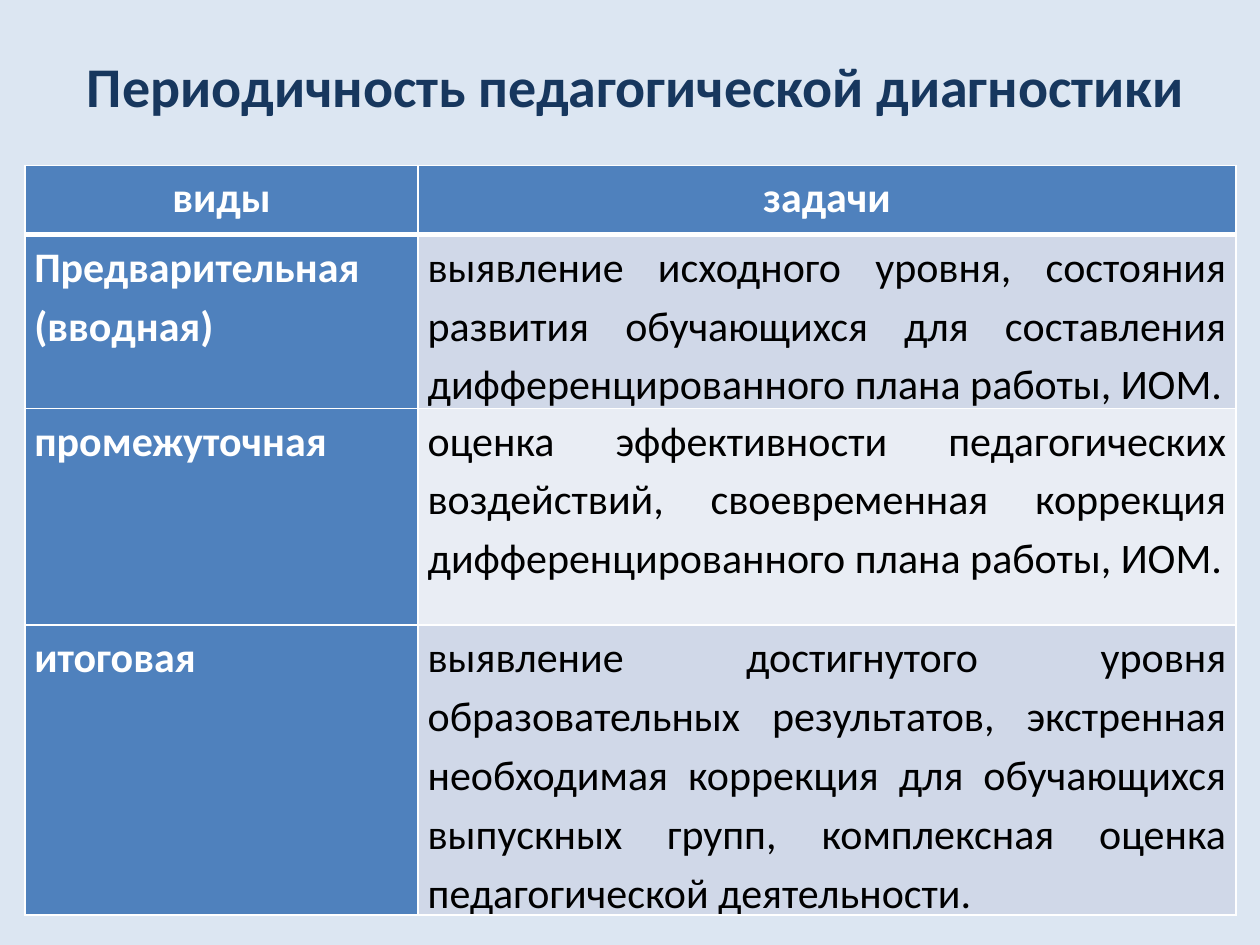
from lxml.etree import SubElement as Sub
from pptx import Presentation
from pptx.dml.color import RGBColor as RGB
from pptx.enum.text import MSO_ANCHOR as Anchor, MSO_AUTO_SIZE as Fit, PP_ALIGN as Align
from pptx.oxml.ns import qn
from pptx.util import Pt

PALE = RGB(0xDC, 0xE6, 0xF2)
NAVY = RGB(0x17, 0x37, 0x5E)
BLUE = RGB(0x4F, 0x81, 0xBD)
BANDS = [RGB(0xD0, 0xD8, 0xE8), RGB(0xE9, 0xED, 0xF4)]
WHITE = RGB(0xFF, 0xFF, 0xFF)
BLACK = RGB(0, 0, 0)

TITLE = "Периодичность педагогической диагностики"
ROWS = [
    ("виды", "задачи"),
    ("Предварительная (вводная)",
     "выявление исходного уровня, состояния развития обучающихся для "
     "составления дифференцированного плана работы, ИОМ."),
    ("промежуточная",
     "оценка эффективности педагогических воздействий, своевременная "
     "коррекция дифференцированного плана работы, ИОМ."),
    ("итоговая",
     "выявление достигнутого уровня образовательных результатов, экстренная "
     "необходимая коррекция для обучающихся выпускных групп, комплексная "
     "оценка педагогической деятельности."),
]
WIDTHS = [224.8, 467.2]
HEIGHTS = [39.6, 81.4, 123.8, 123.8]


def add_run(para, text, size, color, bold):
    run = para.add_run()
    run.text = text
    font = run.font
    font.name, font.size, font.bold = "Calibri", Pt(size), bold
    font.color.rgb = color


def set_title(slide):
    box = slide.shapes.title
    box.left, box.top, box.width, box.height = Pt(42.5), Pt(26), Pt(648), Pt(46)
    frame = box.text_frame
    frame.word_wrap = False
    frame.auto_size = Fit.SHAPE_TO_FIT_TEXT
    frame.vertical_anchor = Anchor.TOP
    para = frame.paragraphs[0]
    para.alignment = Align.LEFT
    add_run(para, TITLE, 32, NAVY, True)


def set_edges(cell, top, base):
    """Draw white cell borders; top and base are line widths in points."""
    props = cell._tc.get_or_add_tcPr()
    for tag, width in (("lnL", 1), ("lnR", 1), ("lnT", top), ("lnB", base)):
        line = Sub(props, qn(f"a:{tag}"), w=str(Pt(width)))
        fill = Sub(line, qn("a:solidFill"))
        Sub(fill, qn("a:srgbClr"), val=str(WHITE))


def fill_cell(cell, text, row, col):
    head = row == 0
    key = head or col == 0
    cell.margin_left = cell.margin_right = Pt(5.4)
    cell.margin_top = cell.margin_bottom = 0
    set_edges(cell, 3 if row == 1 else 1, 3 if head else 1)
    cell.fill.solid()
    cell.fill.fore_color.rgb = BLUE if key else BANDS[(row - 1) % 2]
    para = cell.text_frame.paragraphs[0]
    para.alignment = Align.CENTER if head else Align.JUSTIFY
    para.line_spacing = 1.15
    add_run(para, text, 24, WHITE if key else BLACK, key)


def add_grid(slide):
    frame = slide.shapes.add_table(
        len(ROWS), len(WIDTHS), Pt(14.2), Pt(94.5), Pt(sum(WIDTHS)), Pt(sum(HEIGHTS)))
    table = frame.table
    table.first_col = True
    for col, width in zip(table.columns, WIDTHS):
        col.width = Pt(width)
    for r, (height, texts) in enumerate(zip(HEIGHTS, ROWS)):
        table.rows[r].height = Pt(height)
        for c, text in enumerate(texts):
            fill_cell(table.cell(r, c), text, r, c)


def main():
    deck = Presentation()
    deck.slide_width, deck.slide_height = Pt(720), Pt(540)
    slide = deck.slides.add_slide(deck.slide_layouts[5])
    back = slide.background.fill
    back.solid()
    back.fore_color.rgb = PALE
    add_grid(slide)
    set_title(slide)
    deck.save("out.pptx")


if __name__ == "__main__":
    main()
